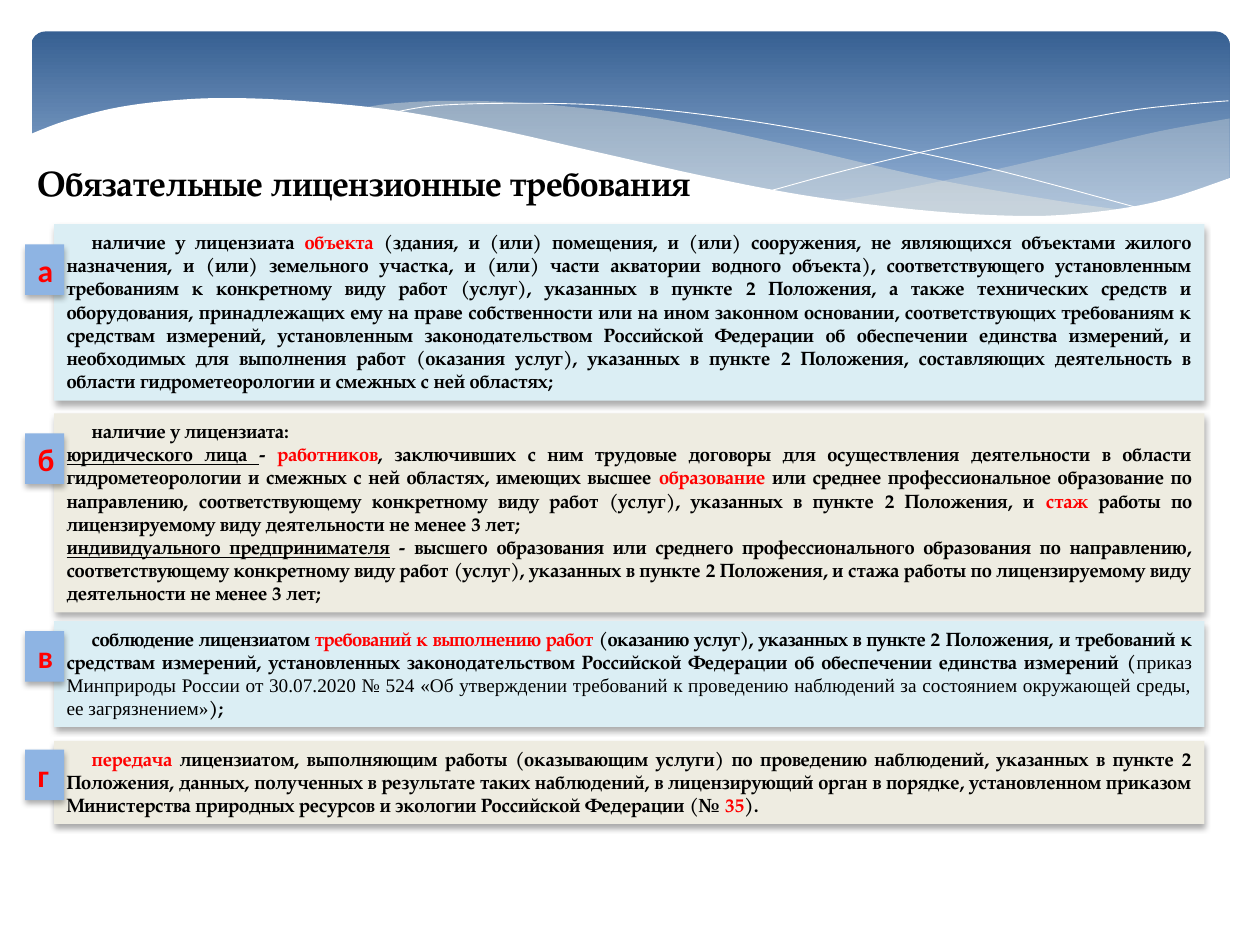
from dataclasses import dataclass

from lxml.etree import SubElement
from pptx import Presentation
from pptx.dml.color import RGBColor
from pptx.enum.shapes import MSO_SHAPE
from pptx.enum.text import MSO_ANCHOR, MSO_AUTO_SIZE, PP_ALIGN
from pptx.oxml.ns import qn
from pptx.util import Inches, Pt


@dataclass(frozen=True)
class Theme:
    """Colours, fonts and type sizes of the slide."""
    header_dark: str = "376092"
    header_light: str = "95B3D7"
    wave: str = "EEECE1"
    white: str = "FFFFFF"
    text: str = "000000"
    accent: str = "FF0000"
    badge: str = "8EB4E3"
    panels: tuple = ("DBEEF4", "EEECE1")
    serif: str = "TeX Gyre Pagella"
    citation: str = "Times New Roman"
    sans: str = "Calibri"
    title_size: int = 20
    body_size: int = 11
    badge_size: int = 18


@dataclass(frozen=True)
class Box:
    """A rectangle in inches."""
    left: float
    top: float
    width: float
    height: float

    def lengths(self):
        """Return the four sides as slide lengths."""
        return [Inches(value) for value in (self.left, self.top, self.width, self.height)]


THEME = Theme()

WHITE_RIDGE = [(-0.02, 0.82), (0.27, 0.71), (0.7, 0.6), (1.21, 0.54), (1.68, 0.53), (2.25, 0.56),
               (2.91, 0.63), (3.66, 0.77), (4.5, 0.96), (5.3, 1.14), (6.01, 1.28), (6.63, 1.37),
               (7.19, 1.43), (7.68, 1.46), (8.12, 1.46), (8.62, 1.41), (9.05, 1.32), (9.52, 1.16)]
RIGHT_WAVE = ([(9.51, 0.69), (8.96, 0.79), (8.36, 0.93), (7.54, 1.12), (6.81, 1.27), (6.36, 1.35)],
              [(6.36, 1.35), (6.94, 1.42), (7.56, 1.47), (8.1, 1.47), (8.56, 1.42), (9.03, 1.33),
               (9.51, 1.16)])
MIDDLE_WAVE = ([(8.68, 1.42), (8.12, 1.34), (7.16, 1.17), (6.04, 0.91), (5.3, 0.75), (4.64, 0.64),
                (3.95, 0.57), (3.36, 0.55), (2.88, 0.57), (2.61, 0.61)],
               [(2.61, 0.61), (3.17, 0.69), (3.79, 0.81), (4.66, 1.01), (5.41, 1.18), (6.09, 1.31),
                (6.7, 1.4), (7.36, 1.46), (7.93, 1.48), (8.32, 1.46), (8.68, 1.42)])
WAVE_LINES = [
    [(2.84, 0.65), (3.19, 0.59), (3.76, 0.57), (4.44, 0.58), (5.08, 0.63), (5.83, 0.73),
     (6.7, 0.89), (7.7, 1.11), (8.82, 1.41)],
    [(5.88, 1.26), (6.47, 1.1), (7.23, 0.92), (8.11, 0.74), (8.7, 0.63), (9.13, 0.58), (9.5, 0.55)],
]

REQUIREMENTS = [
    ("а", 1.78, 1.4, 0.16, [
        [("наличие у лицензиата ", "body"), ("объекта", "accent"),
         (" (здания, и (или) помещения, и (или) сооружения, не являющихся объектами жилого назначения, "
          "и (или) земельного участка, и (или) части акватории водного объекта), соответствующего "
          "установленным требованиям к конкретному виду работ (услуг), указанных в пункте 2 Положения, "
          "а также технических средств и оборудования, принадлежащих ему на праве собственности или на "
          "ином законном основании, соответствующих требованиям к средствам измерений, установленным "
          "законодательством Российской Федерации об обеспечении единства измерений, и необходимых для "
          "выполнения работ (оказания услуг), указанных в пункте 2 Положения, составляющих деятельность "
          "в области гидрометеорологии и смежных с ней областях;", "body")]]),
    ("б", 3.28, 1.58, 0.16, [
        [("наличие у лицензиата:", "body")],
        [("юридического лица ", "underlined"), ("- ", "body"), ("работников", "accent"),
         (", заключивших с ним трудовые договоры для осуществления деятельности в области "
          "гидрометеорологии и смежных с ней областях, имеющих высшее ", "body"),
         ("образование", "accent"),
         (" или среднее профессиональное образование по направлению, соответствующему конкретному виду "
          "работ (услуг), указанных в пункте 2 Положения, и ", "body"), ("стаж", "accent"),
         (" работы по лицензируемому виду деятельности не менее 3 лет;", "body")],
        [("индивидуального предпринимателя", "underlined"),
         (" - высшего образования или среднего профессионального образования по направлению, "
          "соответствующему конкретному виду работ (услуг), указанных в пункте 2 Положения, и стажа "
          "работы по лицензируемому виду деятельности не менее 3 лет;", "body")]]),
    ("в", 4.93, 0.84, 0.08, [
        [("соблюдение лицензиатом ", "tight"), ("требований к выполнению работ ", "tight accent"),
         ("(оказанию услуг), указанных в пункте 2 ", "tight"),
         ("Положения, и требований к средствам измерений, установленных законодательством Российской "
          "Федерации об обеспечении единства измерений (", "body"),
         ("приказ Минприроды России от 30.07.2020 № 524 «Об утверждении требований к проведению "
          "наблюдений за состоянием окружающей среды, ее загрязнением»", "citation"), (");", "body")]]),
    ("г", 5.88, 0.66, 0.07, [
        [("передача", "accent"),
         (" лицензиатом, выполняющим работы (оказывающим услуги) по проведению наблюдений, указанных в "
          "пункте 2 Положения, данных, полученных в результате таких наблюдений, в лицензирующий орган "
          "в порядке, установленном приказом Министерства природных ресурсов и экологии Российской "
          "Федерации (№ ", "body"), ("35", "accent"), (").", "body")]]),
]


def smooth(points, steps=6):
    """Return a Catmull-Rom curve through the points."""
    padded = [points[0], *points, points[-1]]
    curve = [points[0]]
    for before, start, end, after in zip(padded, padded[1:], padded[2:], padded[3:]):
        for step in range(1, steps + 1):
            t = step / steps
            curve.append(tuple(
                (2 * b + (c - a) * t + (2 * a - 5 * b + 4 * c - d) * t ** 2
                 + (3 * b - a - 3 * c + d) * t ** 3) / 2
                for a, b, c, d in zip(before, start, end, after)))
    return curve


def style_run(run, size, font, color=THEME.text, bold=True):
    """Format one run of text."""
    run.font.size, run.font.name, run.font.bold = Pt(size), font, bold
    run.font.color.rgb = RGBColor.from_string(color)


def add_outline(slide, box, points, closed=True):
    """Add a freeform without shadow, measured from the box corner."""
    places = [(Inches(box.left + x), Inches(box.top + y)) for x, y in points]
    builder = slide.shapes.build_freeform(*places[0], scale=1.0)
    builder.add_line_segments(places[1:], close=closed)
    shape = builder.convert_to_shape()
    shape.shadow.inherit = False
    return shape


def fill_solid(shape, color, opacity=100):
    """Fill a shape without a border, with an optional opacity."""
    shape.fill.solid()
    shape.fill.fore_color.rgb = RGBColor.from_string(color)
    shape.line.fill.background()
    if opacity < 100:
        color_element = shape._element.spPr.find(".//" + qn("a:srgbClr"))
        SubElement(color_element, qn("a:alpha"), val=str(opacity * 1000))


def add_header(slide, box):
    """Draw the gradient banner with its waves."""
    banner = slide.shapes.add_shape(MSO_SHAPE.ROUNDED_RECTANGLE, *box.lengths())
    banner.adjustments[0] = 0.07
    banner.shadow.inherit = False
    banner.line.fill.background()
    banner.fill.gradient()
    banner.fill.gradient_angle = 270
    stops = zip(banner.fill.gradient_stops, (THEME.header_dark, THEME.header_light), (0, 0.9))
    for stop, color, position in stops:
        stop.color.rgb = RGBColor.from_string(color)
        stop.position = position
    for (upper, lower), opacity in ((RIGHT_WAVE, 29), (MIDDLE_WAVE, 40)):
        wave = add_outline(slide, box, smooth(upper) + smooth(lower))
        fill_solid(wave, THEME.wave, opacity)
    for points in WAVE_LINES:
        line = add_outline(slide, box, smooth(points), closed=False)
        line.fill.background()
        line.line.color.rgb = RGBColor.from_string(THEME.white)
        line.line.width = Pt(0.5)
    ridge = add_outline(slide, box, smooth(WHITE_RIDGE) + [(9.52, 1.99), (-0.02, 1.99)])
    fill_solid(ridge, THEME.white)


def add_title(slide, box):
    """Place the title placeholder in front of the banner."""
    title = slide.shapes.title
    slide.shapes._spTree.append(title._element)
    title.left, title.top, title.width, title.height = box.lengths()
    title.text_frame.text = "Обязательные лицензионные требования"
    title.text_frame.vertical_anchor = MSO_ANCHOR.TOP
    title.text_frame.auto_size = MSO_AUTO_SIZE.NONE
    paragraph = title.text_frame.paragraphs[0]
    paragraph.alignment = PP_ALIGN.LEFT
    style_run(paragraph.runs[0], THEME.title_size, THEME.serif)


def add_card(slide, box, color):
    """Add a rectangle with a soft shadow and return it."""
    card = slide.shapes.add_shape(MSO_SHAPE.RECTANGLE, *box.lengths())
    fill_solid(card, color)
    card.shadow.inherit = False
    effects = card._element.spPr.find(qn("a:effectLst"))
    shadow = SubElement(effects, qn("a:outerShdw"), blurRad=str(Pt(3.5)), dist=str(Pt(2.2)),
                        dir="5400000", rotWithShape="0")
    shade = SubElement(shadow, qn("a:srgbClr"), val=THEME.text)
    SubElement(shade, qn("a:alpha"), val="32000")
    frame = card.text_frame
    frame.word_wrap = True
    frame.vertical_anchor = MSO_ANCHOR.TOP
    frame.auto_size = MSO_AUTO_SIZE.SHAPE_TO_FIT_TEXT
    return card


def add_panel(slide, box, color, paragraphs):
    """Add a justified text panel whose first line is indented."""
    frame = add_card(slide, box, color).text_frame
    for index, pieces in enumerate(paragraphs):
        paragraph = frame.add_paragraph() if index else frame.paragraphs[0]
        paragraph.alignment = PP_ALIGN.JUSTIFY
        if index == 0:
            paragraph._p.get_or_add_pPr().set("indent", str(Inches(0.2)))
        for text, style in pieces:
            run = paragraph.add_run()
            run.text = text
            cited = style == "citation"
            style_run(run, THEME.body_size, THEME.citation if cited else THEME.serif,
                      THEME.accent if "accent" in style else THEME.text, not cited)
            if style == "underlined":
                run.font.underline = True
            if "tight" in style:
                run._r.get_or_add_rPr().set("spc", "-20")


def add_badge(slide, box, letter):
    """Add the letter that marks a panel."""
    frame = add_card(slide, box, THEME.badge).text_frame
    frame.text = letter
    frame.paragraphs[0].alignment = PP_ALIGN.LEFT
    style_run(frame.paragraphs[0].runs[0], THEME.badge_size, THEME.sans, THEME.accent)


def add_requirements(slide, box):
    """Place all panels, then their badges in front."""
    for index, (_, top, height, _, paragraphs) in enumerate(REQUIREMENTS):
        color = THEME.panels[index % len(THEME.panels)]
        add_panel(slide, Box(box.left + 0.23, top, box.width - 0.23, height), color, paragraphs)
    for letter, top, _, offset, _ in REQUIREMENTS:
        add_badge(slide, Box(box.left, top + offset, 0.31, 0.4), letter)


def main():
    """Build and save the presentation."""
    presentation = Presentation()
    presentation.slide_width, presentation.slide_height = Inches(10), Inches(7.5)
    slide = presentation.slides.add_slide(presentation.slide_layouts[5])
    add_header(slide, Box(0.25, 0.25, 9.51, 1.56))
    add_title(slide, Box(0.2, 1.23, 6.22, 0.44))
    add_requirements(slide, Box(0.2, 1.78, 9.36, 4.76))
    presentation.save("out.pptx")


if __name__ == "__main__":
    main()
